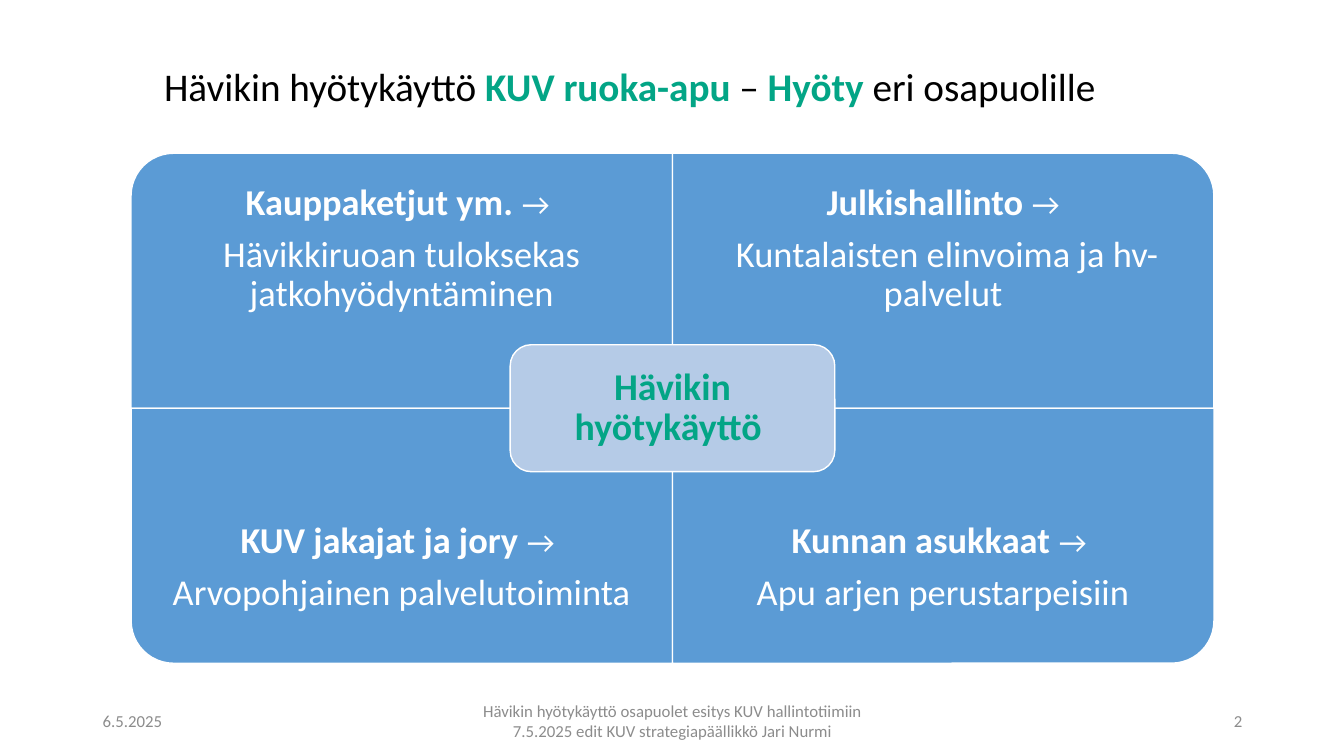
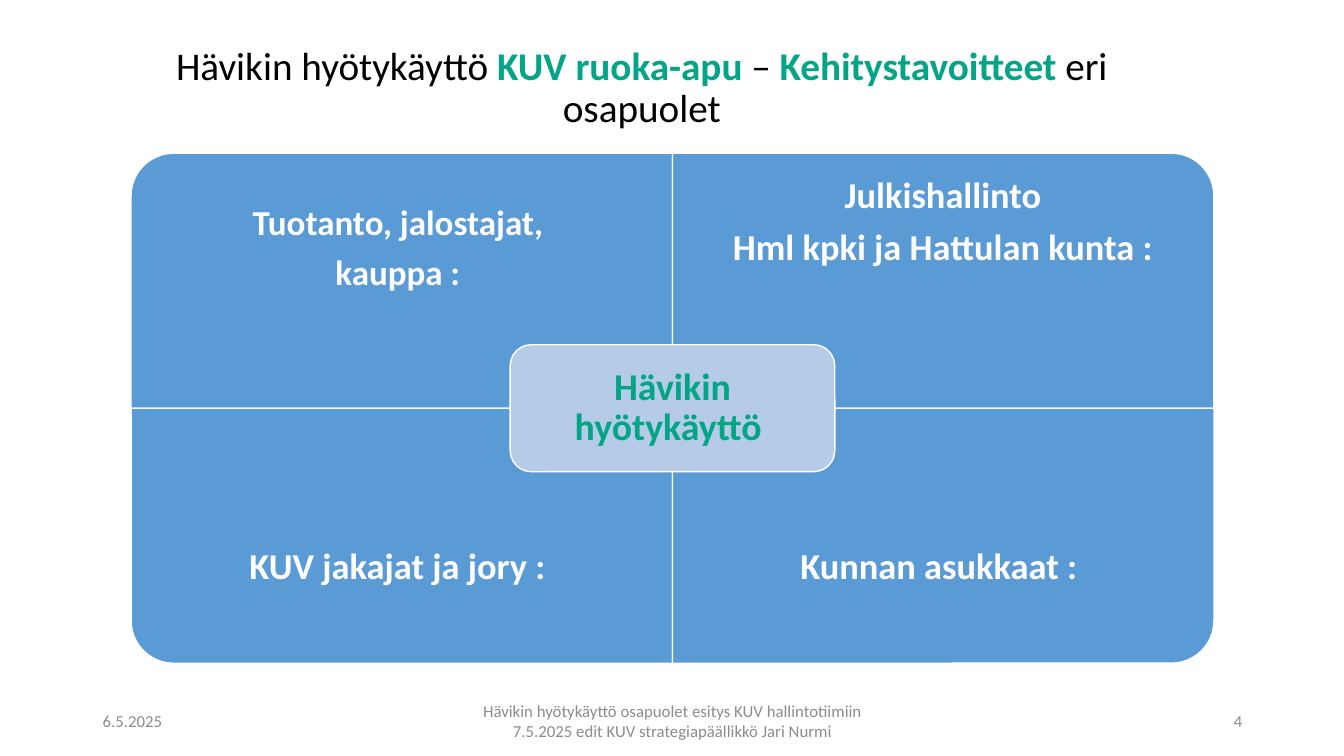
from pptx import Presentation
from pptx.dml.color import RGBColor
from pptx.enum import shapes, text
from pptx.util import Emu, Pt

# Shared measures and styles: 100 px to the inch
PX = 9144
FONT = "Calibri"
COLORS = {
    "black": "000000",
    "white": "FFFFFF",
    "green": "03A586",
    "blue": "5B9BD5",
    "pale": "B5CBE7",
    "grey": "8C8C8C",
}
LEFT, TOP, CELL_W, CELL_H = 130, 152, 537, 253
TEXT_H = 190
CORE_W, CORE_H = 322, 126
ALIGN = text.PP_ALIGN
ROUNDED = shapes.MSO_SHAPE.ROUNDED_RECTANGLE
ONE_ROUND = shapes.MSO_SHAPE.ROUND_1_RECTANGLE
GROUP = "KUV"
FOOTER = (f"Hävikin hyötykäyttö osapuolet esitys {GROUP} hallintotiimiin "
          f"7.5.2025 edit {GROUP} strategiapäällikkö Jari Nurmi")
# Turn that brings the round corner outwards, by (row, column)
CORNER_TURNS = {(0, 0): 270, (0, 1): 0, (1, 0): 180, (1, 1): 90}


def px(*lengths):
    return [Emu(length * PX) for length in lengths]


def rgb(name):
    return RGBColor.from_string(COLORS[name])


def run(words, size=26, color="white", bold=False):
    return words, size, color, bold


def write(shape, paragraphs, align=ALIGN.CENTER, insets=(10, 5, 10, 5),
          spacing=0.9, after=0):
    """Fill a shape with paragraphs, each a list of runs."""
    frame = shape.text_frame
    frame.word_wrap = True
    frame.auto_size = text.MSO_AUTO_SIZE.NONE
    frame.vertical_anchor = text.MSO_ANCHOR.MIDDLE
    (frame.margin_left, frame.margin_top,
     frame.margin_right, frame.margin_bottom) = px(*insets)
    for index, runs in enumerate(paragraphs):
        paragraph = frame.add_paragraph() if index else frame.paragraphs[0]
        paragraph.alignment = align
        paragraph.line_spacing = spacing
        paragraph.space_before = Pt(0)
        paragraph.space_after = Pt(after)
        for words, size, color, bold in runs:
            piece = paragraph.add_run()
            piece.text = words
            piece.font.name = FONT
            piece.font.size = Pt(size)
            piece.font.bold = bold
            piece.font.color.rgb = rgb(color)


def add_panel(slide, kind, box, fill, turn=0):
    shape = slide.shapes.add_shape(kind, *px(*box))
    shape.rotation = turn
    shape.shadow.inherit = False
    shape.fill.solid()
    shape.fill.fore_color.rgb = rgb(fill)
    shape.line.color.rgb = rgb("white")
    shape.line.width = Pt(1)
    return shape


def add_text(slide, box, paragraphs, **style):
    write(slide.shapes.add_textbox(*px(*box)), paragraphs, **style)


def add_title(slide, width, topic, ending):
    title = slide.shapes.title
    title.left, title.top, title.width, title.height = px(92, 40, width, 96)
    write(title, [[
        run("Hävikin hyötykäyttö ", 28, "black"),
        run(f"{GROUP} ruoka-apu ", 28, "green", True),
        run("– ", 28, "black"),
        run(topic, 28, "green", True),
        run(ending, 28, "black"),
    ]])


def add_quadrant(slide, row, column, paragraphs, extra_bottom=0):
    left, top = LEFT + column * CELL_W, TOP + row * CELL_H
    turn = CORNER_TURNS[row, column]
    # A quarter turn swaps the sides around the same centre
    width, height = (CELL_H, CELL_W) if turn % 180 else (CELL_W, CELL_H)
    box = (left + (CELL_W - width) // 2, top + (CELL_H - height) // 2,
           width, height)
    add_panel(slide, ONE_ROUND, box, "blue", turn)
    text_top = top + row * (CELL_H - TEXT_H)
    add_text(slide, (left, text_top, CELL_W, TEXT_H), paragraphs,
             insets=(20, 20, 20, 20 + extra_bottom), after=9)


def add_core(slide):
    box = (LEFT + CELL_W - CORE_W // 2, TOP + CELL_H - CORE_H // 2,
           CORE_W, CORE_H)
    core = add_panel(slide, ROUNDED, box, "pale")
    write(core, [[run("Hävikin hyötykäyttö ", 27, "green", True)]],
          insets=(17, 17, 17, 17), after=9)


def add_footer(slide, number):
    for left, width, words, align in (
        (92, 300, "6.5.2025", ALIGN.LEFT),
        (442, 450, FOOTER, ALIGN.CENTER),
        (942, 300, number, ALIGN.RIGHT),
    ):
        add_text(slide, (left, 695, width, 40), [[run(words, 12, "grey")]],
                 align=align, spacing=1.0)


def benefit(party, gain, tail=" "):
    """Bold party with an arrow, then what it gains."""
    heading = [run(party + " ", bold=True), run("→", 22)]
    if tail:
        heading.append(run(tail))
    return [heading, [run(gain)]]


def goal(*lines, size=26):
    return [[run(line, size, bold=True)] for line in lines]


def add_matrix_slide(presentation, title, quadrants, number):
    slide = presentation.slides.add_slide(presentation.slide_layouts[5])
    add_title(slide, *title)
    for index, (paragraphs, extra_bottom) in enumerate(quadrants):
        add_quadrant(slide, *divmod(index, 2), paragraphs, extra_bottom)
    add_core(slide)
    add_footer(slide, number)


def main():
    presentation = Presentation()
    presentation.slide_width, presentation.slide_height = px(1333, 750)

    # Benefits for each party
    add_matrix_slide(presentation, (1074, "Hyöty", " eri osapuolille "), [
        (benefit("Kauppaketjut ym.",
                 "Hävikkiruoan tuloksekas jatkohyödyntäminen"), 0),
        (benefit("Julkishallinto",
                 " Kuntalaisten elinvoima ja hv-palvelut", tail=""), 0),
        (benefit(f"{GROUP} jakajat ja jory",
                 "Arvopohjainen palvelutoiminta"), 0),
        (benefit("Kunnan asukkaat", "Apu arjen perustarpeisiin"), 0),
    ], "2")

    # Development goals; the second quadrant sits one line higher
    add_matrix_slide(presentation, (1089, "Kehitystavoitteet", " eri osapuolet"), [
        (goal("Tuotanto, jalostajat, ", "kauppa : ", size=25), 0),
        (goal("Julkishallinto", "Hml kpki ja Hattulan kunta :"), 52),
        (goal(f"{GROUP} jakajat ja jory : "), 0),
        (goal("Kunnan asukkaat : "), 0),
    ], "4")

    presentation.save("out.pptx")


if __name__ == "__main__":
    main()
